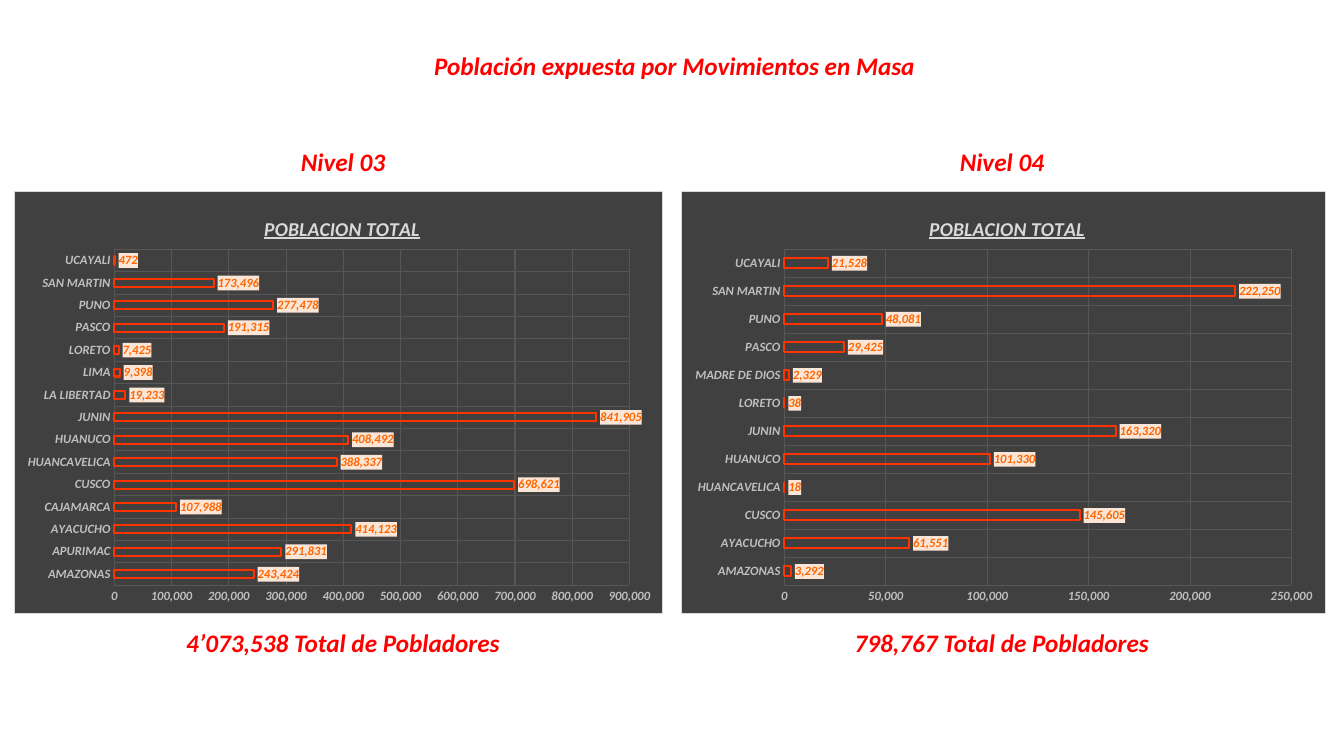
"""Build the slide on people exposed to mass movements."""
import pptx
import pptx.chart.data
import pptx.dml.color
import pptx.enum.chart
import pptx.enum.text
import pptx.oxml
import pptx.oxml.ns
import pptx.util

HUES = {"red": "FF0000", "dark": "404040", "grid": "565656", "edge": "D9D9D9",
        "axis": "BFBFBF", "bar": "FF3300", "value": "FF6600", "label": "FBE5D6"}
SPACES = pptx.oxml.ns.nsdecls("c", "a")
qn = pptx.oxml.ns.qn

LEFT = {"AMAZONAS": 243424, "APURIMAC": 291831, "AYACUCHO": 414123,
        "CAJAMARCA": 107988, "CUSCO": 698621, "HUANCAVELICA": 388337,
        "HUANUCO": 408492, "JUNIN": 841905, "LA LIBERTAD": 19233,
        "LIMA": 9398, "LORETO": 7425, "PASCO": 191315, "PUNO": 277478,
        "SAN MARTIN": 173496, "UCAYALI": 472}
RIGHT = {"AMAZONAS": 3292, "AYACUCHO": 61551, "CUSCO": 145605,
         "HUANCAVELICA": 18, "HUANUCO": 101330, "JUNIN": 163320,
         "LORETO": 38, "MADRE DE DIOS": 2329, "PASCO": 29425,
         "PUNO": 48081, "SAN MARTIN": 222250, "UCAYALI": 21528}


def px(size):
    return pptx.util.Emu(round(size * 914400 / 100.8))


def paint(hue):
    return pptx.dml.color.RGBColor.from_string(HUES[hue])


def panel(fill, edge=None):
    line = f'<a:ln w="9525"><a:solidFill><a:srgbClr val="{HUES[edge]}"/></a:solidFill></a:ln>' if edge else ""
    return pptx.oxml.parse_xml(
        f'<c:spPr {SPACES}><a:solidFill><a:srgbClr val="{HUES[fill]}"/></a:solidFill>{line}</c:spPr>')


def place(node, index, marks):
    old = node.find(qn("c:layout"))
    if old is not None:
        node.remove(old)
    body = "".join(f'<c:{tag} val="{value}"/>' for tag, value in marks.items())
    node.insert(index, pptx.oxml.parse_xml(
        f"<c:layout {SPACES}><c:manualLayout>{body}</c:manualLayout></c:layout>"))


class Deck:
    def __init__(self):
        self.file = pptx.Presentation()
        self.file.slide_width, self.file.slide_height = px(1344), px(756)
        self.slide = self.file.slides.add_slide(self.file.slide_layouts[5])

    def font(self, font, size, hue):
        font.name, font.size = "Calibri", pptx.util.Pt(size)
        font.bold = font.italic = True
        font.color.rgb = paint(hue)

    def label(self, shape, text, wrap):
        frame = shape.text_frame
        frame.text = text
        frame.word_wrap = wrap
        frame.auto_size = pptx.enum.text.MSO_AUTO_SIZE.NONE
        frame.vertical_anchor = pptx.enum.text.MSO_ANCHOR.TOP
        para = frame.paragraphs[0]
        para.alignment = pptx.enum.text.PP_ALIGN.CENTER
        self.font(para.font, 18, "red")

    def title(self, text, x, y, w, h):
        shape = self.slide.shapes.title
        shape.left, shape.top, shape.width, shape.height = map(px, (x, y, w, h))
        self.label(shape, text, False)

    def text(self, text, mid, y, w):
        box = self.slide.shapes.add_textbox(px(mid - w / 2), px(y), px(w), px(40))
        self.label(box, text, True)

    def axis(self, axis):
        axis.has_major_gridlines = True
        grid = axis.major_gridlines.format.line
        grid.width, grid.color.rgb = pptx.util.Pt(0.75), paint("grid")
        axis.format.line.fill.background()
        axis.major_tick_mark = axis.minor_tick_mark = pptx.enum.chart.XL_TICK_MARK.NONE
        self.font(axis.tick_labels.font, 9, "axis")

    def bars(self, rows, x, w, start, span, top, step):
        y, h = 191, 423
        data = pptx.chart.data.CategoryChartData(number_format="#,##0")
        data.categories = list(rows)
        data.add_series("Series 1", list(rows.values()))
        kind = pptx.enum.chart.XL_CHART_TYPE.BAR_CLUSTERED
        chart = self.slide.shapes.add_chart(kind, px(x), px(y), px(w), px(h), data).chart
        chart.has_legend = False
        chart.font.name, chart.font.size = "Calibri", pptx.util.Pt(10)

        chart.has_title = True
        frame = chart.chart_title.text_frame
        frame.text = "POBLACION TOTAL"
        head = frame.paragraphs[0].font
        self.font(head, 14, "edge")
        head.underline = True

        self.axis(chart.category_axis)
        self.axis(chart.value_axis)
        scale = chart.value_axis
        scale.minimum_scale, scale.maximum_scale, scale.major_unit = 0, top, step
        scale.tick_labels.number_format = "#,##0"
        scale.tick_labels.number_format_is_linked = False

        plot = chart.plots[0]
        plot.gap_width, plot.overlap, plot.vary_by_categories = 182, -50, False
        bar = plot.series[0].format
        bar.fill.background()
        bar.line.width, bar.line.color.rgb = pptx.util.Pt(1.5), paint("bar")

        plot.has_data_labels = True
        tags = plot.data_labels
        tags.show_value = True
        tags.position = pptx.enum.chart.XL_LABEL_POSITION.OUTSIDE_END
        tags.number_format, tags.number_format_is_linked = "#,##0", False
        self.font(tags.font, 9, "value")
        tags._element.find(qn("c:txPr")).addprevious(panel("label"))

        body = chart._chartSpace.find(qn("c:chart"))
        body.addnext(panel("dark", "edge"))
        place(body.find(qn("c:plotArea")), 0, {
            "layoutTarget": "inner", "xMode": "edge", "yMode": "edge",
            "x": (start - x) / w, "y": (249 - y) / h, "w": span / w, "h": 337 / h})
        place(body.find(qn("c:title")), 1, {
            "xMode": "edge", "yMode": "edge", "x": (w / 2 - 78) / w, "y": 20 / h})


def main():
    deck = Deck()
    deck.title("Población expuesta por Movimientos en Masa", 421, 45, 507, 40)
    for level, mid, total in (("Nivel 03", 343, "4’073,538"), ("Nivel 04", 1002, "798,767")):
        deck.text(level, mid, 141, 111)
        deck.text(f"{total} Total de Pobladores", mid, 622, 338)
    deck.bars(LEFT, 14, 649, 114, 516, 900000, 100000)
    deck.bars(RIGHT, 681, 645, 784, 508, 250000, 50000)
    deck.file.save("out.pptx")


if __name__ == "__main__":
    main()
